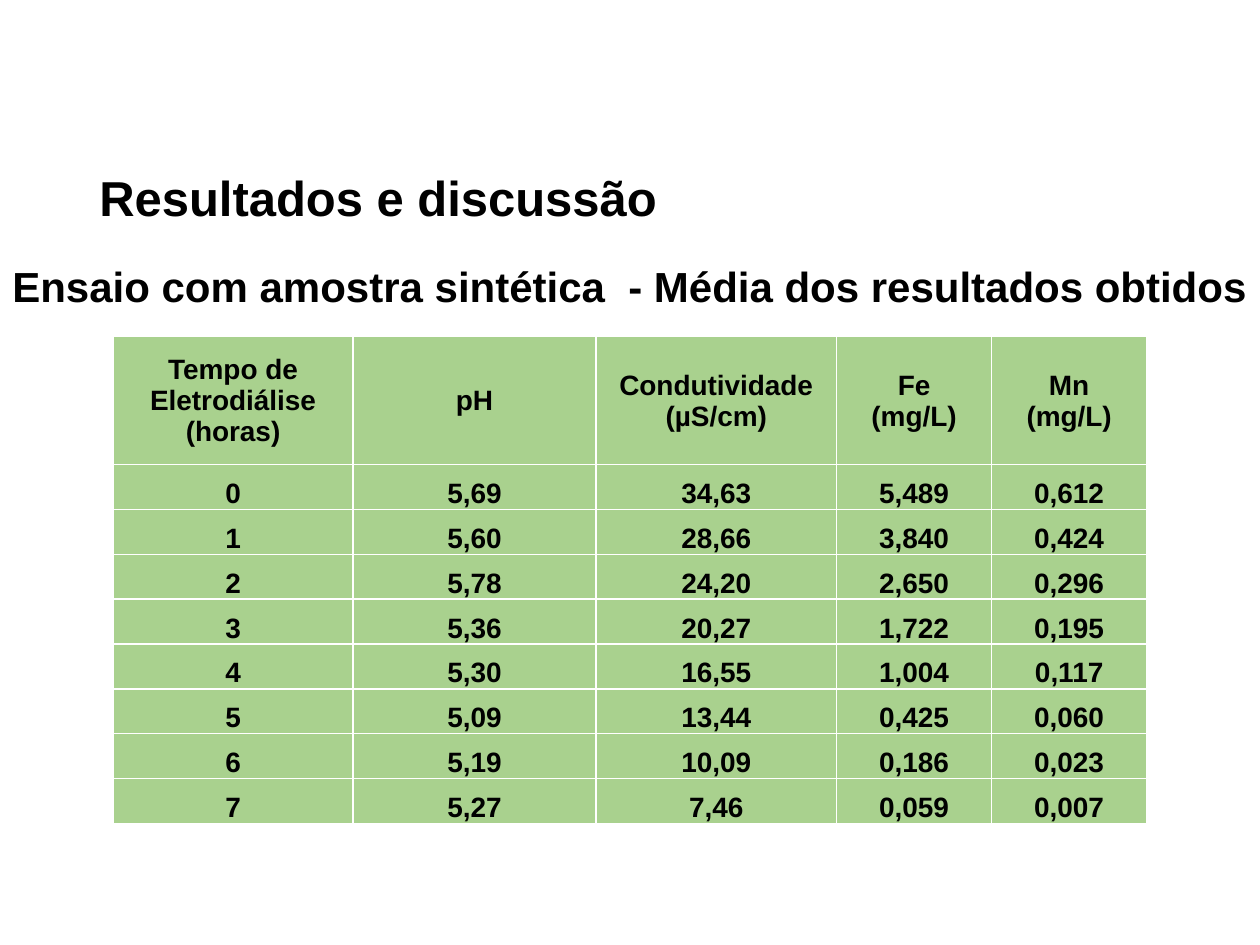
from lxml.etree import SubElement
from pptx import Presentation
from pptx.dml.color import RGBColor
from pptx.enum.text import MSO_ANCHOR as Anchor, PP_ALIGN as Align
from pptx.oxml.ns import qn
from pptx.util import Pt

BLACK, WHITE, GREEN = "000000", "FFFFFF", "A9D18E"
COLUMN_WIDTHS = [136.8, 139, 137.5, 88.6, 88.6]
HEADER_HEIGHT, ROW_HEIGHT = 73.3, 25.65
ROWS = [
    ["Tempo de Eletrodiálise (horas)", "pH", "Condutividade\v(µS/cm)",
     "Fe\v(mg/L)", "Mn\v(mg/L)"],
    ["0", "5,69", "34,63", "5,489", "0,612"],
    ["1", "5,60", "28,66", "3,840", "0,424"],
    ["2", "5,78", "24,20", "2,650", "0,296"],
    ["3", "5,36", "20,27", "1,722", "0,195"],
    ["4", "5,30", "16,55", "1,004", "0,117"],
    ["5", "5,09", "13,44", "0,425", "0,060"],
    ["6", "5,19", "10,09", "0,186", "0,023"],
    ["7", "5,27", "7,46", "0,059", "0,007"],
]


def color(value):
    return RGBColor.from_string(value)


def add_span(para, text, size):
    span = para.add_run()
    span.text = text
    span.font.name = "Arial"
    span.font.size = Pt(size)
    span.font.bold = True
    span.font.color.rgb = color(BLACK)


def add_text(page, text, left, top, width, height, size, anchor):
    box = page.shapes.add_textbox(Pt(left), Pt(top), Pt(width), Pt(height))
    frame = box.text_frame
    frame.word_wrap = True
    frame.vertical_anchor = anchor
    frame.margin_right = 0
    para = frame.paragraphs[0]
    para.alignment = Align.LEFT
    para.line_spacing = 0.9
    add_span(para, text, size)


def add_borders(cell, line_color, width):
    properties = cell._tc.get_or_add_tcPr()
    for side in ("lnL", "lnR", "lnT", "lnB"):
        line = SubElement(properties, qn(f"a:{side}"), w=str(Pt(width)))
        fill = SubElement(line, qn("a:solidFill"))
        SubElement(fill, qn("a:srgbClr"), val=line_color)


def fill_cell(cell, text, anchor):
    add_borders(cell, WHITE, 1)
    cell.fill.solid()
    cell.fill.fore_color.rgb = color(GREEN)
    cell.vertical_anchor = anchor
    cell.margin_left = cell.margin_right = cell.margin_top = Pt(0.7)
    cell.margin_bottom = 0
    para = cell.text_frame.paragraphs[0]
    para.alignment = Align.CENTER
    # A vertical tab in the text marks a line break
    for index, part in enumerate(text.split("\v")):
        if index:
            para.add_line_break()
        add_span(para, part, 16)


def add_results_table(page, left, top):
    heights = [HEADER_HEIGHT] + [ROW_HEIGHT] * (len(ROWS) - 1)
    table = page.shapes.add_table(
        len(ROWS), len(COLUMN_WIDTHS), Pt(left), Pt(top),
        Pt(sum(COLUMN_WIDTHS)), Pt(sum(heights))).table
    for column, width in zip(table.columns, COLUMN_WIDTHS):
        column.width = Pt(width)
    for index, (row, height, values) in enumerate(zip(table.rows, heights, ROWS)):
        row.height = Pt(height)
        anchor = Anchor.BOTTOM if index else Anchor.MIDDLE
        for cell, text in zip(row.cells, values):
            fill_cell(cell, text, anchor)


def main():
    deck = Presentation()
    deck.slide_width, deck.slide_height = Pt(720), Pt(540)
    page = deck.slides.add_slide(deck.slide_layouts[6])

    # Subtitle and title
    add_text(page, "Ensaio com amostra sintética  - Média dos resultados obtidos",
             0, 148.3, 720, 329.8, 24, Anchor.TOP)
    add_text(page, "Resultados e discussão",
             49.7, 88.6, 620.6, 44.6, 28, Anchor.BOTTOM)

    # Mean results by hour
    add_results_table(page, 64.8, 192.2)
    deck.save("out.pptx")


if __name__ == "__main__":
    main()
